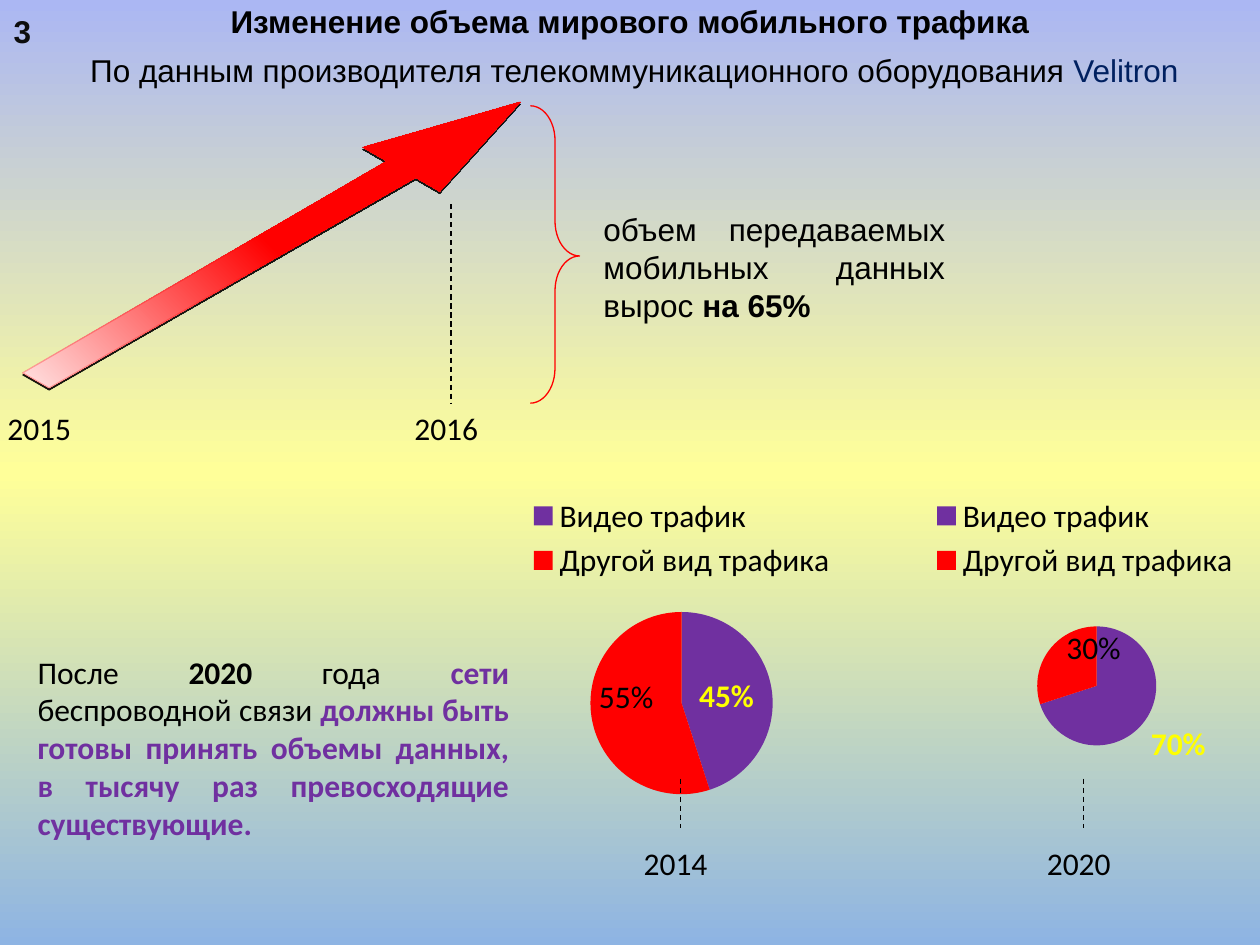
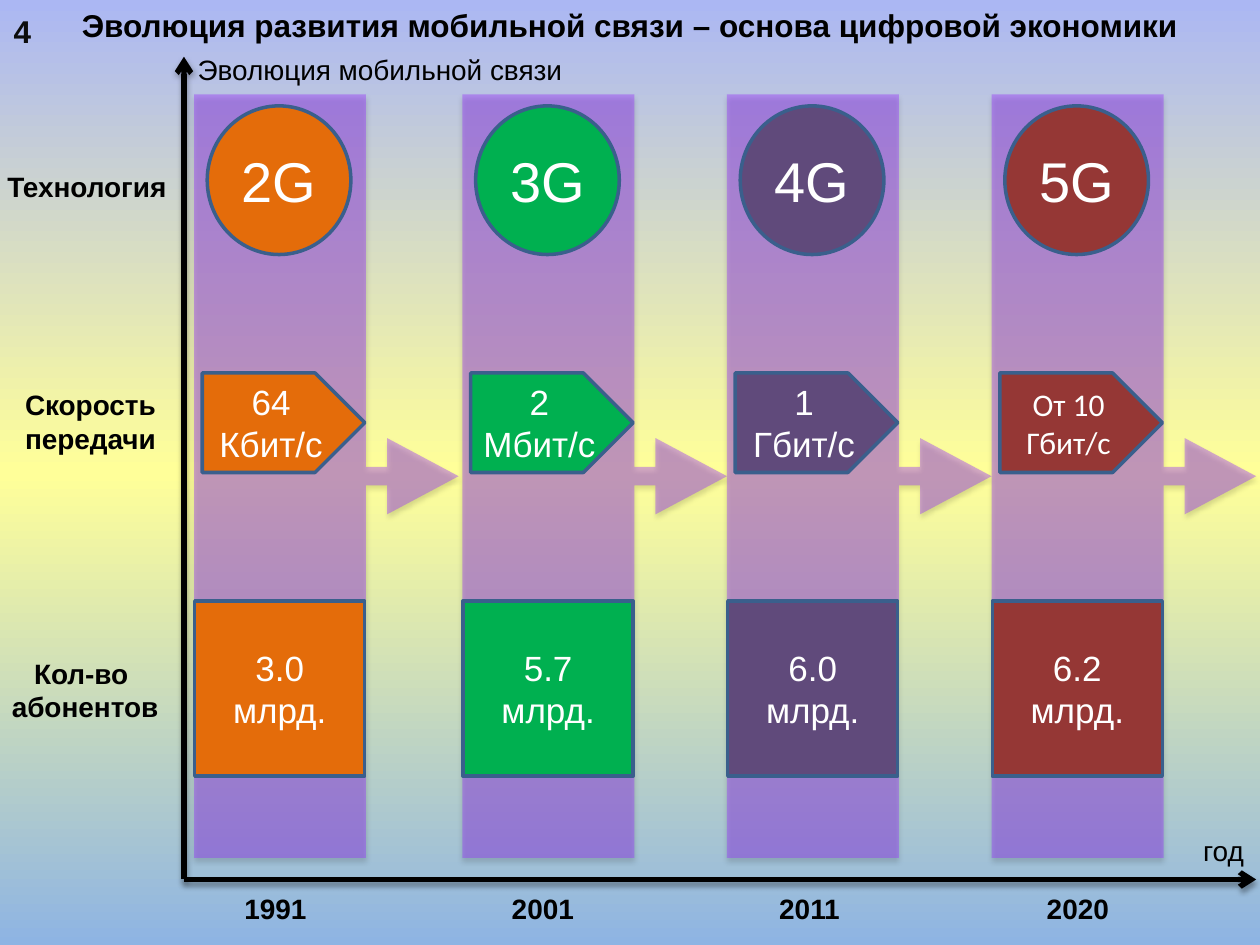
from lxml.etree import SubElement
from pptx import Presentation
from pptx.chart.data import CategoryChartData
from pptx.dml.color import RGBColor
from pptx.enum.chart import XL_CHART_TYPE, XL_LABEL_POSITION, XL_LEGEND_POSITION
from pptx.enum.dml import MSO_LINE
from pptx.enum.shapes import MSO_CONNECTOR, MSO_SHAPE
from pptx.enum.text import MSO_ANCHOR, PP_ALIGN
from pptx.oxml import parse_xml
from pptx.oxml.ns import nsdecls, qn
from pptx.util import Inches, Pt

# The slide is a grid of 100 columns by 75 rows
UNIT = 0.1
PAGE = (0, 0, 100, 75)

HUES = {
    "black": "000000", "white": "FFFFFF", "ink": "0D0D0D", "navy": "002060",
    "red": "FF0000", "pink": "FFE3E3", "purple": "7030A0", "yellow": "FFFF00",
    "violet": "9933FF", "rim": "3A5F8C", "orange": "E46C0A", "green": "00B050",
    "plum": "604A7B", "brick": "953735", "blue": "8EB4E3", "cream": "FFFF99",
    "lilac": "ABB7F3",
}
BODY = {"name": "Arial", "size": Pt(18), "bold": False, "hue": "black"}
BOLD = BODY | {"bold": True}
CALI = BODY | {"name": "Calibri"}
NOTE = BODY | {"size": Pt(16)}
HEAD = NOTE | {"bold": True}
MARK = {"bold": True, "hue": "purple"}


# Shared helpers
def rgb(hue):
    return RGBColor.from_string(HUES[hue])


def span(*cells):
    return [Inches(cell * UNIT) for cell in cells]


def within(box, x, y, w, h):
    return span(box[0] + x, box[1] + y, w, h)


def style(font, form):
    for key, value in form.items():
        if key == "hue":
            font.color.rgb = rgb(value)
        else:
            setattr(font, key, value)


def fade(node, share):
    color = node.find(".//" + qn("a:srgbClr"))
    SubElement(color, qn("a:alpha"), val=str(share * 1000))


def blend(grad, stops, angle=None):
    """Fill a gradient; without an angle it spreads from the top right."""
    grad.clear()
    group = SubElement(grad, qn("a:gsLst"))
    for place, hue in stops:
        stop = SubElement(group, qn("a:gs"), pos=str(place * 1000))
        SubElement(stop, qn("a:srgbClr"), val=HUES[hue])
    if angle is None:
        ring = SubElement(grad, qn("a:path"), path="circle")
        SubElement(ring, qn("a:fillToRect"), l="100000", b="100000")
    else:
        SubElement(grad, qn("a:lin"), ang=str(angle * 60000), scaled="0")


def shade(part, share=0, blur=3.1, dist=1.8):
    props = part.element.spPr
    for old in props.findall(qn("a:effectLst")):
        props.remove(old)
    effects = SubElement(props, qn("a:effectLst"))
    if share:
        drop = SubElement(effects, qn("a:outerShdw"), blurRad=str(Pt(blur)),
                          dist=str(Pt(dist)), dir="5400000", rotWithShape="0")
        SubElement(drop, qn("a:srgbClr"), val=HUES["black"])
        fade(drop, share)


def write(frame, lines, form, align):
    """Each line is a text or a list of (text, changes) runs."""
    frame.word_wrap = True
    for row, line in enumerate(lines):
        para = frame.add_paragraph() if row else frame.paragraphs[0]
        para.alignment = align
        for text, change in [(line, {})] if isinstance(line, str) else line:
            run = para.add_run()
            run.text = text
            style(run.font, form | change)


def label(slide, place, lines, form=BODY, align=PP_ALIGN.LEFT):
    write(slide.shapes.add_textbox(*place).text_frame, lines, form, align)


def paint(part, fill=None, line=None, width=2):
    if fill:
        part.fill.solid()
        part.fill.fore_color.rgb = rgb(fill)
    else:
        part.fill.background()
    if line:
        part.line.color.rgb = rgb(line)
        part.line.width = Pt(width)
    else:
        part.line.fill.background()
    shade(part)


def shape(slide, kind, place, fill=None, line=None, width=2, adjust=()):
    part = slide.shapes.add_shape(kind, *place)
    for spot, value in enumerate(adjust):
        part.adjustments[spot] = value
    paint(part, fill, line, width)
    return part


def rule(slide, box, x, y, w, h, width=0.75, arrow=False):
    left, top, wide, high = within(box, x, y, w, h)
    line = slide.shapes.add_connector(MSO_CONNECTOR.STRAIGHT, left, top,
                                      left + wide, top + high)
    line.line.color.rgb = rgb("black")
    line.line.width = Pt(width)
    if arrow:
        SubElement(line.element.spPr.find(qn("a:ln")), qn("a:tailEnd"), type="arrow")
    else:
        line.line.dash_style = MSO_LINE.DASH
    shade(line, 35 if arrow else 0)


def base(deck, number, title, top):
    slide = deck.slides.add_slide(deck.slide_layouts[6])
    slide.background.fill.gradient()
    blend(slide.element.find(".//" + qn("a:gradFill")),
          [(0, "blue"), (50, "cream"), (100, "lilac")], 270)
    label(slide, within(PAGE, 0, top, 100, 4), [title], BOLD, PP_ALIGN.CENTER)
    label(slide, within(PAGE, 0.1, 0.5, 3.1, 4), [number], BOLD | {"hue": "ink"})
    return slide


# Slide 1: growth of traffic
def climb(slide, box):
    """Draw the slanted arrow, from its tip round the head and shaft."""
    turns = ((41.3, -0.3), (28.8, 3.3), (30.7, 4.4), (1.8, 21.2),
             (3.9, 22.4), (33, 5.7), (34.9, 6.8))
    spots = [span(box[0] + x, box[1] + y) for x, y in turns]
    path = slide.shapes.build_freeform(*spots[0])
    path.add_line_segments(spots[1:], close=True)
    arrow = path.convert_to_shape()
    paint(arrow, "red", "red", 0.75)
    arrow.fill.gradient()
    props = arrow.element.spPr
    blend(props.find(qn("a:gradFill")), [(0, "red"), (50, "red"), (100, "pink")])
    fade(props.find(qn("a:ln")), 28)
    shade(arrow, 90, 0, 1.2)


def growth(slide, box):
    climb(slide, box)
    shape(slide, MSO_SHAPE.RIGHT_BRACE, within(box, 42.1, 0, 3.9, 23.6),
          None, "red", 0.75, (0.711, 0.505))
    for x, year in ((-0.4, "2015"), (31.9, "2016")):
        label(slide, within(box, x, 23.6, 7.9, 4), [year], CALI)
    rule(slide, box, 35.8, 7.8, 0, 15.8)
    label(slide, within(box, 46.9, 7.8, 29.1, 10.1),
          [[("объем передаваемых мобильных данных вырос ", {}),
            ("на 65%", {"bold": True})]], align=PP_ALIGN.JUSTIFY)


def layout(x, y, w=None, h=None):
    size = "" if w is None else f'<c:w val="{w}"/><c:h val="{h}"/>'
    inner = "" if w is None else '<c:layoutTarget val="inner"/>'
    mode = "" if w is None else '<c:xMode val="edge"/><c:yMode val="edge"/>'
    return parse_xml(f'<c:layout {nsdecls("c")}><c:manualLayout>{inner}{mode}'
                     f'<c:x val="{x}"/><c:y val="{y}"/>{size}'
                     '</c:manualLayout></c:layout>')


def pie(slide, box, year, values, plot, spots, shift):
    data = CategoryChartData()
    data.categories = ["Видео трафик", "Другой вид трафика"]
    data.add_series("Series 1", values)
    chart = slide.shapes.add_chart(XL_CHART_TYPE.PIE, *within(box, 0, 0, 27, 27.3),
                                   data).chart
    chart.has_title = False
    style(chart.font, CALI)
    chart.has_legend = True
    chart.legend.position = XL_LEGEND_POSITION.TOP
    chart.legend.include_in_layout = False

    area = chart.element.find(".//" + qn("c:plotArea"))
    for old in area.findall(qn("c:layout")):
        area.remove(old)
    area.insert(0, layout(*plot))

    # Slices and their percent labels
    series = chart.plots[0].series[0]
    forms = ({"bold": True, "hue": "yellow"}, {})
    for spot, (hue, form) in enumerate(zip(("purple", "red"), forms)):
        point = series.points[spot]
        point.format.fill.solid()
        point.format.fill.fore_color.rgb = rgb(hue)
        style(point.data_label.font, CALI | form)
        point.data_label.position = spots[spot]
    tags = chart.element.findall(".//" + qn("c:dLbl"))
    for tag in tags:
        tag.find(qn("c:showVal")).set("val", "0")
        tag.find(qn("c:showPercent")).set("val", "1")
    if shift:
        tags[1].insert(1, layout(*shift))

    rule(slide, box, 13.4, 23.6, 0, 3.9)
    label(slide, within(box, 9.5, 28.3, 7.9, 4), [year], CALI)


def traffic(deck):
    slide = base(deck, "3", "Изменение объема мирового мобильного трафика", -0.3)
    label(slide, within(PAGE, 3.5, 3.6, 93.7, 4),
          [[("По данным производителя телекоммуникационного оборудования ", {}),
            ("Velitron", {"hue": "navy"})]], align=PP_ALIGN.CENTER)
    growth(slide, (0, 8.4, 60, 28))
    spot = XL_LABEL_POSITION
    pie(slide, (72.6, 38.2, 27, 33), "2020", (70, 30), (0.36, 0.42, 0.35, 0.35),
        (spot.OUTSIDE_END, spot.OUTSIDE_END), (0.23, 0.06))
    pie(slide, (40.6, 38.2, 27, 33), "2014", (45, 55), (0.23, 0.38, 0.54, 0.53),
        (spot.CENTER, spot.INSIDE_END), None)
    label(slide, within(PAGE, 2, 51.3, 39.4, 16.2),
          [[("После ", {}), ("2020", {"bold": True}), (" года ", {}),
            ("сети ", MARK), ("беспроводной связи ", {}),
            ("должны быть готовы принять объемы данных, в тысячу раз "
             "превосходящие существующие.", MARK)]], CALI, PP_ALIGN.JUSTIFY)


# Slide 2: generations of networks
def stage(slide, box, hue, name, speed, users, form):
    band = shape(slide, MSO_SHAPE.RIGHT_ARROW_CALLOUT,
                 within(box, 0, 0, 21, 60.6), "violet",
                 adjust=(0.07, 0.144, 0.27, 0.65))
    fade(band.element.spPr, 41)
    shade(band, 35)
    large = BODY | {"size": Pt(32)}
    plain = BODY | {"size": Pt(20)}
    parts = (
        (MSO_SHAPE.OVAL, (1.05, 0.9, 11.4, 11.8), name, large),
        (MSO_SHAPE.PENTAGON, (0.65, 22.1, 12.9, 7.9), speed, plain | form),
        (MSO_SHAPE.RECTANGLE, (0.05, 40.2, 13.5, 13.9), users, plain),
    )
    for kind, place, text, font in parts:
        part = shape(slide, kind, within(box, *place), hue, "rim")
        part.text_frame.vertical_anchor = MSO_ANCHOR.MIDDLE
        write(part.text_frame, [text], font | {"hue": "white"}, PP_ALIGN.CENTER)


def axes(slide, box):
    rule(slide, box, 0, 65.3, 0, -65.3, 3, True)
    rule(slide, box, 0, 65.3, 85.1, 0, 3, True)
    label(slide, within(box, 79.9, 61.2, 5.5, 3.7), ["год"], NOTE)
    label(slide, within(box, 0.1, -0.8, 33.8, 3.7),
          ["Эволюция мобильной связи"], NOTE)
    for spot, year in enumerate(("1991", "2001", "2011", "2020")):
        label(slide, within(box, 3.8 + 21.23 * spot, 65.8, 8.8, 3.7), [year], HEAD)


def evolution(deck):
    slide = base(deck, "4", "Эволюция развития мобильной связи – основа "
                 "цифровой экономики", 0)
    stages = (
        (15.4, "orange", "2G", "64 Кбит/с", "3.0 млрд.", {}),
        (36.7, "green", "3G", "2 Мбит/с", "5.7 млрд.", {}),
        (57.7, "plum", "4G", "1 Гбит/с", "6.0 млрд.", {}),
        (78.7, "brick", "5G", "От 10 Гбит/с", "6.2 млрд.", CALI),
    )
    for left, *facts in stages:
        stage(slide, (left, 7.5, 21, 60.6), *facts)
    axes(slide, (14.6, 4.5, 85.1, 65.3))
    rows = (
        (-0.4, 13, ["Технология"], PP_ALIGN.LEFT),
        (1, 30.3, ["Скорость", "передачи"], PP_ALIGN.LEFT),
        (-1.2, 51.6, ["Кол-во ", "абонентов"], PP_ALIGN.CENTER),
    )
    for x, y, lines, align in rows:
        label(slide, within(PAGE, x, y, 15.9, 1 + 2.7 * len(lines)), lines, HEAD, align)


def main():
    deck = Presentation()
    deck.slide_width, deck.slide_height = span(*PAGE[2:])
    traffic(deck)
    evolution(deck)
    deck.save("out.pptx")


if __name__ == "__main__":
    main()
